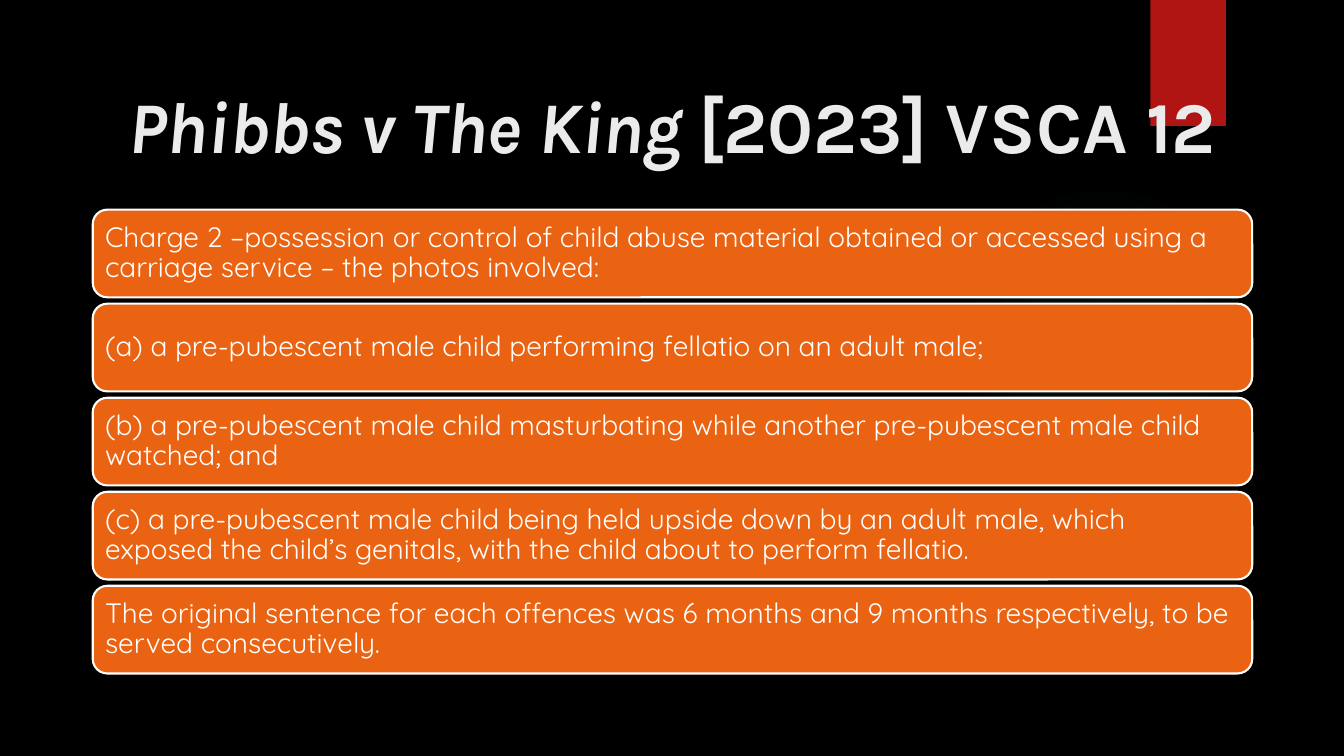
import lxml.etree
import pptx
import pptx.dml.color
import pptx.enum.shapes
import pptx.enum.text
import pptx.oxml
import pptx.oxml.ns
import pptx.util

Inches = pptx.util.Inches
Pt = pptx.util.Pt
SHAPES = pptx.enum.shapes.MSO_SHAPE
MIDDLE = pptx.enum.text.MSO_ANCHOR.MIDDLE
ALIGN = pptx.enum.text.PP_ALIGN


def color(hex_code):
    return pptx.dml.color.RGBColor.from_string(hex_code)


def add_span(para, text, font_name, size, hex_code):
    span = para.add_run()
    span.text = text
    span.font.name = font_name
    span.font.size = Pt(size)
    span.font.color.rgb = color(hex_code)
    return span


deck = pptx.Presentation()
deck.slide_width = Inches(13.33)
deck.slide_height = Inches(7.5)
page = deck.slides.add_slide(deck.slide_layouts[6])
page.background.fill.solid()
page.background.fill.fore_color.rgb = color("000000")

# Faint circular glow behind the cards
glow = page.shapes.add_shape(
    SHAPES.OVAL, Inches(9.41), Inches(1.83), Inches(3.08), Inches(3.08))
glow.shadow.inherit = False
glow.line.fill.background()
stops = "".join(
    f'<a:gs pos="{position * 1000}"><a:srgbClr val="50B9C1">'
    f'<a:alpha val="{opacity * 1000}"/></a:srgbClr></a:gs>'
    for position, opacity in [(0, 7), (36, 6), (69, 0)])
gradient = pptx.oxml.parse_xml(
    f'<a:gradFill {pptx.oxml.ns.nsdecls("a")}><a:gsLst>{stops}</a:gsLst>'
    '<a:path path="circle"><a:fillToRect l="50000" t="50000" r="50000" b="50000"/>'
    '</a:path></a:gradFill>')
glow.element.spPr.find(pptx.oxml.ns.qn("a:prstGeom")).addnext(gradient)

# Red ribbon with a soft shadow below it
ribbon = page.shapes.add_shape(
    SHAPES.RECTANGLE, Inches(11.41), 0, Inches(0.75), Inches(1.25))
ribbon.shadow.inherit = False
ribbon.fill.solid()
ribbon.fill.fore_color.rgb = color("B01513")
ribbon.line.fill.background()
effects = ribbon.element.spPr.find(pptx.oxml.ns.qn("a:effectLst"))
effects.append(pptx.oxml.parse_xml(
    f'<a:outerShdw {pptx.oxml.ns.nsdecls("a")} blurRad="{Pt(3)}" dist="{Pt(2)}" '
    'dir="5400000" rotWithShape="0"><a:srgbClr val="000000">'
    '<a:alpha val="45000"/></a:srgbClr></a:outerShdw>'))

# Title
title = page.shapes.add_textbox(
    Inches(0.92), Inches(0.61), Inches(11.5), Inches(1.24))
title.text_frame.word_wrap = True
title.text_frame.vertical_anchor = MIDDLE
heading = title.text_frame.paragraphs[0]
heading.alignment = ALIGN.CENTER
for text, italic in [("Phibbs v The King ", True), ("[2023] VSCA 12", False)]:
    span = add_span(heading, text, "Karla", 52, "EBEBEB")
    span.font.bold = True
    span.font.italic = italic

# Stacked cards
CARD_TOP = 2.08
CARD_STEP = 0.933
card_texts = [
    "Charge 2 –possession or control of child abuse material obtained or accessed "
    "using a carriage service – the photos involved:",
    "(a) a pre-pubescent male child performing fellatio on an adult male;",
    "(b) a pre-pubescent male child masturbating while another pre-pubescent male "
    "child watched; and",
    "(c) a pre-pubescent male child being held upside down by an adult male, which "
    "exposed the child’s genitals, with the child about to perform fellatio.",
    "The original sentence for each offences was 6 months and 9 months respectively, "
    "to be served consecutively.",
]
for index, text in enumerate(card_texts):
    card = page.shapes.add_shape(
        SHAPES.ROUNDED_RECTANGLE, Inches(0.92), Inches(CARD_TOP + index * CARD_STEP),
        Inches(11.5), Inches(0.87))
    card.shadow.inherit = False
    card.fill.solid()
    card.fill.fore_color.rgb = color("EA6312")
    card.line.color.rgb = color("FFFFFF")
    card.line.width = Pt(1.5)
    frame = card.text_frame
    frame.word_wrap = True
    frame.vertical_anchor = MIDDLE
    frame.margin_left = frame.margin_right = Inches(0.08)
    frame.margin_top = frame.margin_bottom = Inches(0.08)
    para = frame.paragraphs[0]
    para.alignment = ALIGN.LEFT
    para.line_spacing = 0.9
    add_span(para, text, "Quicksand", 20, "FFFFFF")

deck.save("out.pptx")
